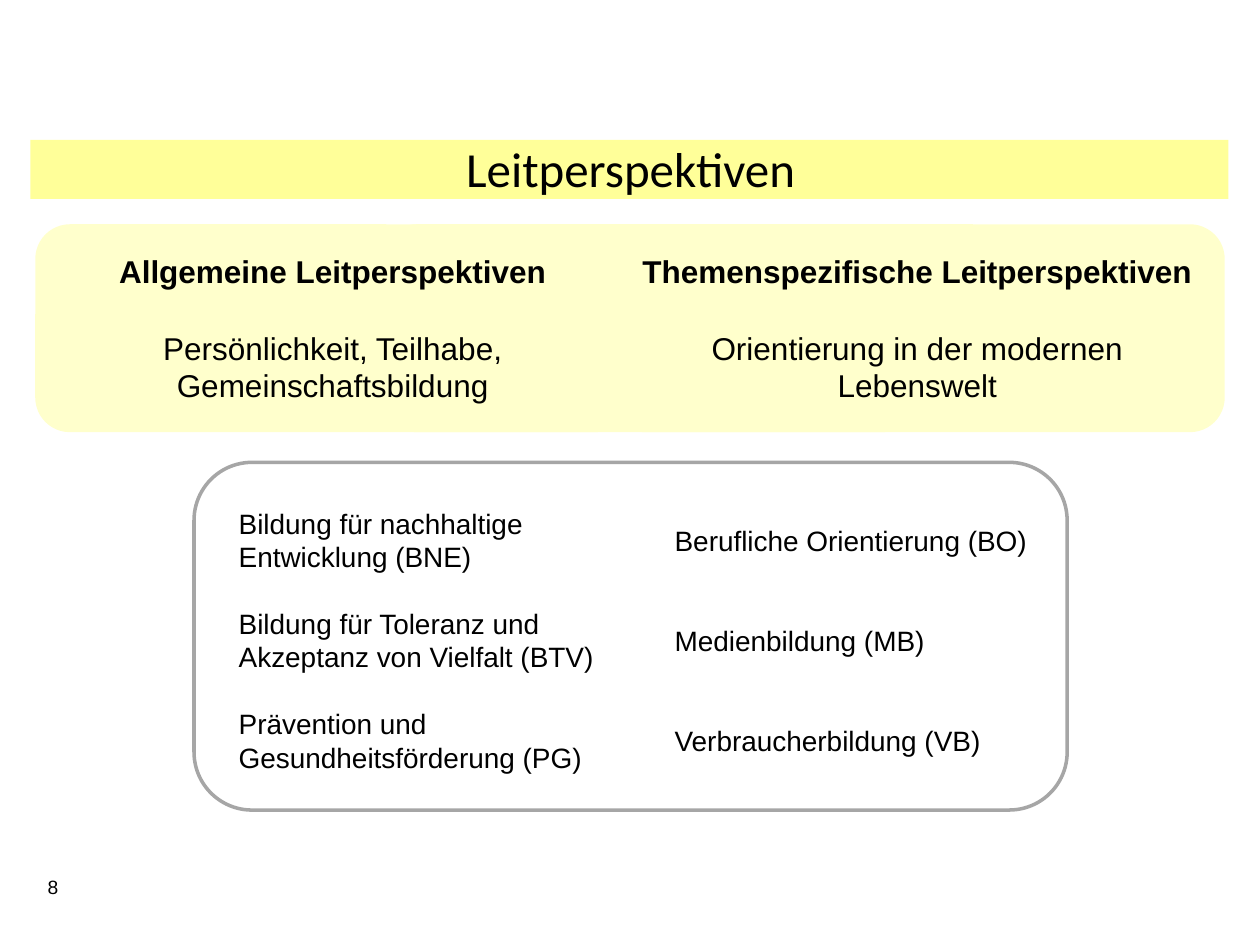
import pptx
import pptx.util
import pptx.dml.color
import pptx.enum.shapes
import pptx.enum.text

RGBColor = pptx.dml.color.RGBColor
Pt = pptx.util.Pt
Shape = pptx.enum.shapes.MSO_SHAPE
Align = pptx.enum.text.PP_ALIGN
Anchor = pptx.enum.text.MSO_ANCHOR

BLACK = RGBColor(0x00, 0x00, 0x00)
GREY = RGBColor(0xA6, 0xA6, 0xA6)
YELLOW = RGBColor(0xFF, 0xFF, 0x99)
PALE_YELLOW = RGBColor(0xFF, 0xFF, 0xCC)

presentation = pptx.Presentation()
presentation.slide_width = pptx.util.Inches(10)
presentation.slide_height = pptx.util.Inches(7.5)
slide = presentation.slides.add_slide(presentation.slide_layouts[6])
column = presentation.slide_width / 100
row = presentation.slide_height / 100


def add_box(kind, left, top, width, height, fill=None, line=None):
    shape = slide.shapes.add_shape(
        kind, round(left * column), round(top * row), round(width * column), round(height * row)
    )
    shape.shadow.inherit = False
    if fill is None:
        shape.fill.background()
    else:
        shape.fill.solid()
        shape.fill.fore_color.rgb = fill
    if line is None:
        shape.line.fill.background()
    else:
        shape.line.color.rgb = line
        shape.line.width = Pt(2)
    shape.text_frame.word_wrap = True
    shape.text_frame.vertical_anchor = Anchor.MIDDLE
    return shape


def add_line(shape, text, size, align=Align.LEFT, bold=False, before=0, font="Arial"):
    frame = shape.text_frame
    paragraph = frame.add_paragraph() if frame.text else frame.paragraphs[0]
    paragraph.text = text
    paragraph.alignment = align
    paragraph.space_before = Pt(before)
    paragraph.font.name = font
    paragraph.font.size = Pt(size)
    paragraph.font.bold = bold
    paragraph.font.color.rgb = BLACK


add_box(Shape.RECTANGLE, 2.4, 14.8, 95.1, 6.27, YELLOW)
title = add_box(Shape.RECTANGLE, 2.8, 14, 94.5, 7.6)
add_line(title, "Leitperspektiven", 28, Align.CENTER, font="Calibri")

number = add_box(Shape.RECTANGLE, 2.8, 92, 5.5, 6.27)
number.text_frame.vertical_anchor = Anchor.TOP
add_line(number, "8", 11)

topic_columns = [
    (15.4, 69.3, GREY, 19, [
        ("Bildung für nachhaltige", "Entwicklung (BNE)"),
        ("Bildung für Toleranz und", "Akzeptanz von Vielfalt (BTV)"),
        ("Prävention und", "Gesundheitsförderung (PG)"),
    ]),
    (50, 34.6, None, 38, [
        ("Berufliche Orientierung (BO)",),
        ("Medienbildung (MB)",),
        ("Verbraucherbildung (VB)",),
    ]),
]
for left, width, line, gap, topics in topic_columns:
    panel = add_box(Shape.ROUNDED_RECTANGLE, left, 48.93, width, 36.8, line=line)
    panel.text_frame.margin_left = pptx.util.Inches(0.22)
    panel.text_frame.margin_top = pptx.util.Inches(0.11)
    for topic_index, topic in enumerate(topics):
        for line_index, text in enumerate(topic):
            starts_topic = topic_index > 0 and line_index == 0
            add_line(panel, text, 16, before=gap if starts_topic else 0)

perspectives = [
    (30.3, 42.5, None, None),
    (48.4, 48.8, "Themenspezifische Leitperspektiven", "Orientierung in der modernen Lebenswelt"),
    (2.8, 47.2, "Allgemeine Leitperspektiven", "Persönlichkeit, Teilhabe, Gemeinschaftsbildung"),
]
for left, width, heading, description in perspectives:
    card = add_box(Shape.ROUNDED_RECTANGLE, left, 23.73, width, 22, PALE_YELLOW)
    if heading:
        add_line(card, heading, 18, Align.CENTER, bold=True)
        add_line(card, description, 18, Align.CENTER, before=22)

presentation.save("out.pptx")
